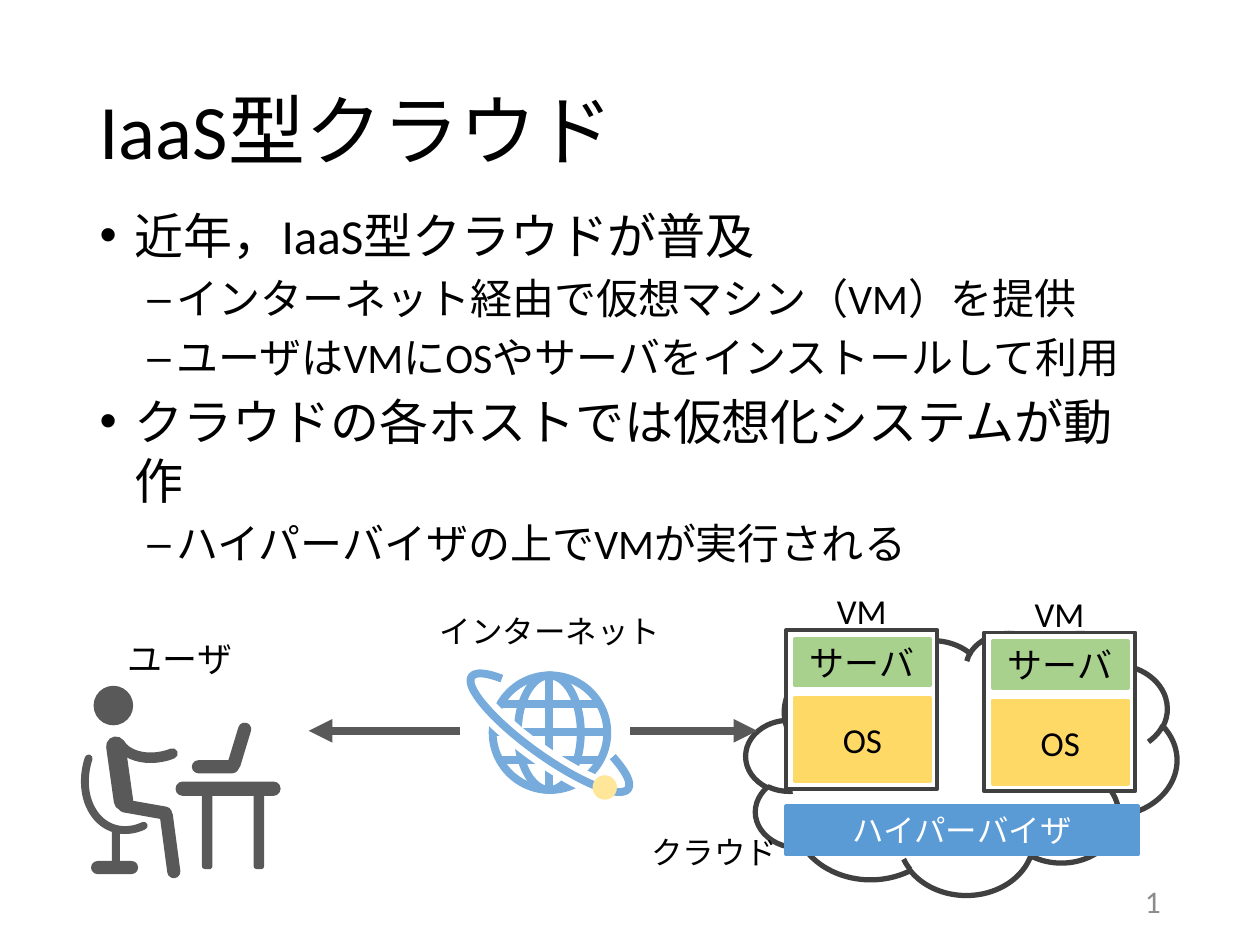
import lxml.etree
import pptx
import pptx.dml.color
import pptx.enum.lang
import pptx.enum.shapes
import pptx.enum.text
import pptx.oxml
import pptx.oxml.ns
import pptx.util

PX = 9144  # EMU in one px, 100 px to the inch
FONT = "Calibri"
COLORS = {
    "black": "000000", "white": "FFFFFF", "outline": "404040",
    "figure": "595959", "globe": "76ABDC", "satellite": "FFE699",
    "hypervisor": "5B9BD5", "os": "FFD966", "server": "A9D18E",
    "number": "8C8C8C",
}
SHAPE = pptx.enum.shapes.MSO_SHAPE
ALIGN = pptx.enum.text.PP_ALIGN
MIDDLE = pptx.enum.text.MSO_ANCHOR.MIDDLE
BULLETS = [
    (0, "近年，IaaS型クラウドが普及"),
    (1, "インターネット経由で仮想マシン（VM）を提供"),
    (1, "ユーザはVMにOSやサーバをインストールして利用"),
    (0, "クラウドの各ホストでは仮想化システムが動作"),
    (1, "ハイパーバイザの上でVMが実行される"),
]
LEVELS = [  # size, left margin, indent
    (28, 28, -28),
    (24, 61, -23),
]


def rgb(name):
    return pptx.dml.color.RGBColor.from_string(COLORS[name])


def px(*lengths):
    return [pptx.util.Emu(length * PX) for length in lengths]


def place(shape, left, top, width, height):
    shape.left, shape.top, shape.width, shape.height = px(left, top, width, height)


def write(paragraph, text, size=18, color="black", align=ALIGN.CENTER):
    paragraph.alignment = align
    run = paragraph.add_run()
    run.text = text
    run.font.size = pptx.util.Pt(size)
    run.font.name = FONT
    run.font.color.rgb = rgb(color)
    run.font.language_id = pptx.enum.lang.MSO_LANGUAGE_ID.JAPANESE
    return run


def add_label(shapes, text, box, **text_format):
    frame = shapes.add_textbox(*px(*box)).text_frame
    frame.word_wrap = True
    write(frame.paragraphs[0], text, **text_format)
    return frame


def add_figure(shapes, kind, box, fill=None, line=None, weight=1, rotation=0,
               adjustments=(), round_cap=False):
    """Add a preset shape; line takes the fill colour unless given."""
    shape = shapes.add_shape(kind, *px(*box))
    shape.shadow.inherit = False
    shape.rotation = rotation
    for index, value in enumerate(adjustments):
        shape.adjustments[index] = value
    if fill:
        shape.fill.solid()
        shape.fill.fore_color.rgb = rgb(fill)
    else:
        shape.fill.background()
    shape.line.color.rgb = rgb(line or fill)
    shape.line.width = pptx.util.Pt(weight)
    if round_cap:
        shape.line._get_or_add_ln().set("cap", "rnd")
    return shape


def add_block(shapes, text, box, fill, **text_format):
    frame = add_figure(shapes, SHAPE.RECTANGLE, box, fill, weight=2.25).text_frame
    frame.vertical_anchor = MIDDLE
    write(frame.paragraphs[0], text, **text_format)


def add_line(shapes, start, end, color, arrow=False):
    connector = shapes.add_connector(
        pptx.enum.shapes.MSO_CONNECTOR.STRAIGHT, *px(*start, *end))
    connector.line.color.rgb = rgb(color)
    connector.line.width = pptx.util.Pt(4.5)
    if arrow:
        lxml.etree.SubElement(connector.line._get_or_add_ln(),
                              pptx.oxml.ns.qn("a:tailEnd"), type="triangle")
    lxml.etree.SubElement(connector._element.spPr, pptx.oxml.ns.qn("a:effectLst"))


def fill_title(title, box):
    place(title, *box)
    title.text_frame.vertical_anchor = MIDDLE
    write(title.text_frame.paragraphs[0], "IaaS型クラウド", size=44, align=ALIGN.LEFT)


def fill_body(body, box):
    place(body, *box)
    frame = body.text_frame
    for index, (level, text) in enumerate(BULLETS):
        paragraph = frame.add_paragraph() if index else frame.paragraphs[0]
        size, margin, indent = LEVELS[level]
        paragraph.level = level
        write(paragraph, text, size=size, align=ALIGN.LEFT)
        properties = paragraph._p.get_or_add_pPr()
        properties.set("marL", str(margin * PX))
        properties.set("indent", str(indent * PX))


def add_slide_number(shapes, box):
    frame = add_label(shapes, "2", box, color="number", align=ALIGN.RIGHT)
    frame.vertical_anchor = MIDDLE
    run = frame.paragraphs[0].runs[0]._r
    run.tag = pptx.oxml.ns.qn("a:fld")
    run.set("id", "{B6F15528-21DE-4FAA-801E-634DDDAF4B2B}")
    run.set("type", "slidenum")


def add_user(shapes, left, top):
    """Draw a person at a desk with a laptop, below the label."""
    group = shapes.add_group_shape().shapes

    def at(x, y, width, height):
        return left + x, top + y, width, height

    add_figure(group, SHAPE.OVAL, at(9, 44, 30, 30), "figure")
    bars = [  # box, rotation, corner
        ((74, 120, 82, 10), 0, 0.5),      # desk top
        ((68, 154, 61, 7), 270, 0.25),    # desk legs
        ((109, 154, 61, 7), 270, 0.25),
        ((87, 103, 36, 9), 0, 0.5),       # laptop base
        ((105, 87, 38, 9), 286.9, 0.5),   # laptop screen
        ((0, 106, 58, 14), 262, 0.5),     # torso
        ((28, 137, 42, 9), 10, 0.5),      # thigh
        ((42, 164, 54, 9), 262.4, 0.5),   # shin
        ((10, 170, 32, 5), 270, 0.5),     # chair post
        ((7, 183, 36, 9), 0, 0.5),        # chair foot
    ]
    for box, rotation, corner in bars:
        add_figure(group, SHAPE.ROUNDED_RECTANGLE, at(*box), "figure",
                   rotation=rotation, adjustments=[corner])
    arcs = [  # box, rotation, angles, weight
        ((27, 59, 62, 41), 170, (146.14, 210.46), 6),      # arm
        ((3, 63, 74, 96), 201.1, (143.02, 212.91), 4.5),   # chair back
    ]
    for box, rotation, angles, weight in arcs:
        add_figure(group, SHAPE.ARC, at(*box), line="figure", weight=weight,
                   rotation=rotation, adjustments=angles, round_cap=True)
    add_label(group, "ユーザ", at(13, 0, 128, 44), size=20)


def add_virtual_machine(shapes, left, top):
    add_figure(shapes, SHAPE.RECTANGLE, (left, top, 120, 126), "white", "outline", 2.25)
    add_label(shapes, "VM", (left - 23, top - 37, 166, 44), size=20)
    add_block(shapes, "OS", (left + 7, top + 54, 107, 66), "os", size=20)
    add_block(shapes, "サーバ", (left + 7, top + 7, 107, 37), "server", size=20)


def add_cloud(shapes, left, top, width, height):
    add_figure(shapes, SHAPE.CLOUD, (left, top, width, height), "white", "outline", 3)
    group = shapes.add_group_shape().shapes
    add_label(group, "クラウド", (left - 108, top + 154, 166, 40))
    add_block(group, "ハイパーバイザ", (left + 32, top + 138, 279, 38),
              "hypervisor", color="white")
    add_virtual_machine(group, left + 32, top - 2)
    add_virtual_machine(group, left + 189, top)


def add_internet(shapes, left, top, size):
    """Draw a globe with an orbiting satellite between two arrows."""
    group = shapes.add_group_shape().shapes
    middle_x, middle_y = left + size // 2, top + size // 2
    right, bottom = left + size, top + size
    add_figure(group, SHAPE.OVAL, (left, top, size, size), "white", "globe", 4.5)
    add_line(group, (left, middle_y), (right, middle_y), "globe")
    add_line(group, (middle_x, top), (middle_x, bottom), "globe")
    for y in (middle_y - 22, middle_y + 22):
        add_line(group, (left + 5, y), (right - 5, y), "globe")
    add_figure(group, SHAPE.OVAL, (middle_x - 25, top, 50, size), line="globe", weight=4.5)
    for color, weight in (("white", 12), ("globe", 4.5)):
        add_figure(group, SHAPE.ARC, (left + 27, top - 31, 37, 153), line=color,
                   weight=weight, rotation=305.7, adjustments=(45.11, 169.6))
    arrow_y = middle_y - 1
    add_line(shapes, (right + 18, arrow_y), (right + 119, arrow_y), "figure", arrow=True)
    add_label(shapes, "インターネット", (left - 56, top - 55, 203, 40))
    add_line(shapes, (left - 26, arrow_y), (left - 146, arrow_y), "figure", arrow=True)
    add_figure(shapes, SHAPE.OVAL, (left + 80, top + 80, 18, 18), "satellite")


def main():
    presentation = pptx.Presentation()
    presentation.slide_width, presentation.slide_height = px(1000, 750)
    slide = presentation.slides.add_slide(presentation.slide_layouts[1])
    fill_title(slide.shapes.title, (69, 30, 862, 145))
    fill_body(slide.placeholders[1], (69, 158, 862, 537))
    add_cloud(slide.shapes, 592, 502, 342, 208)
    add_slide_number(slide.shapes, (662, 695, 269, 40))
    add_user(slide.shapes, 66, 501)
    add_internet(slide.shapes, 391, 536, 91)
    presentation.save("out.pptx")


if __name__ == "__main__":
    main()
